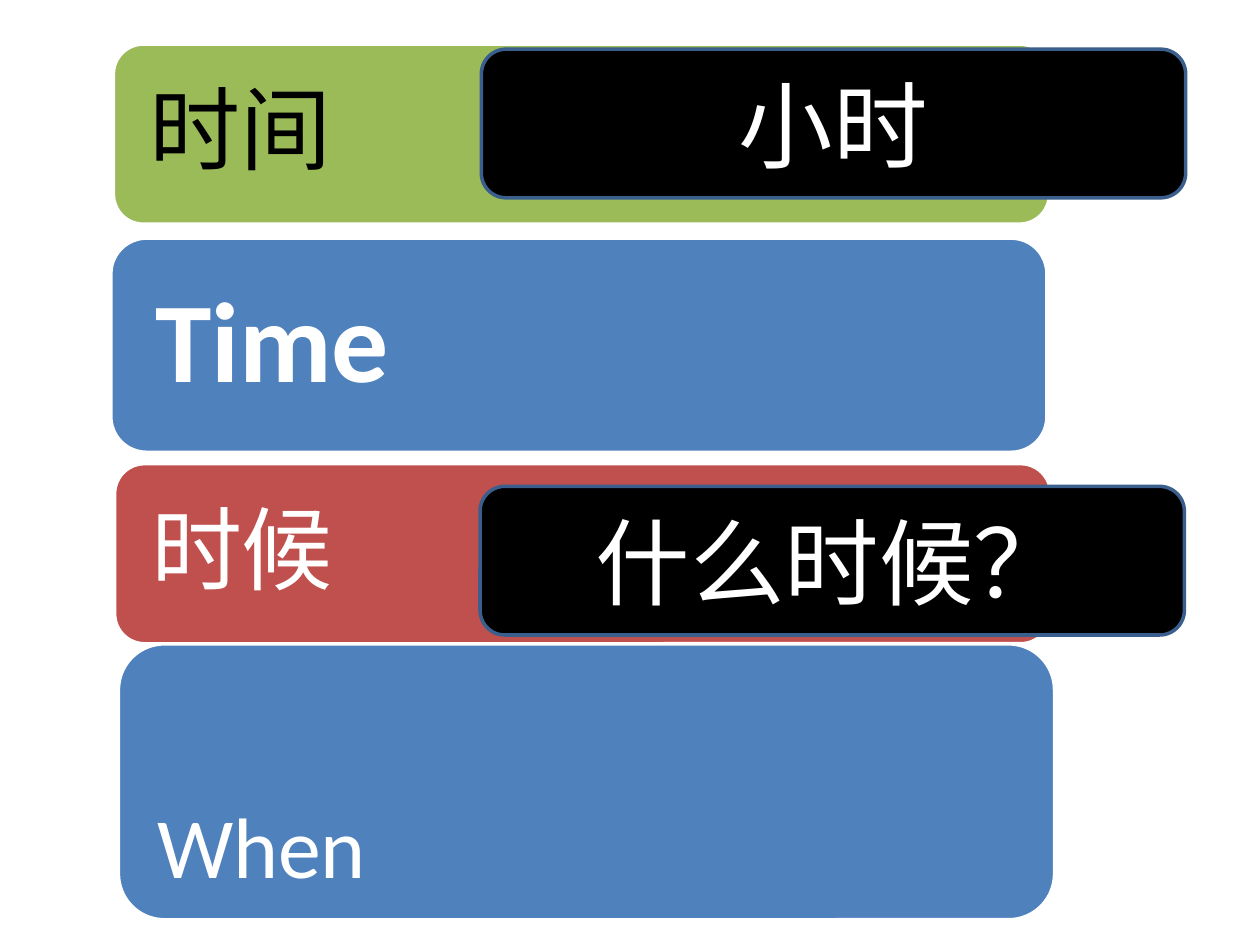
import pptx
import pptx.util
import pptx.oxml.ns
import pptx.dml.color
import pptx.enum.shapes
import pptx.enum.text
import lxml.etree

Inches = pptx.util.Inches
Pt = pptx.util.Pt
Align = pptx.enum.text.PP_ALIGN
Anchor = pptx.enum.text.MSO_ANCHOR

HUES = {
    "green": "9BBB59",
    "red": "C0504D",
    "blue": "4F81BD",
    "edge": "3A5F8C",
    "black": "000000",
    "white": "FFFFFF",
}


def tint(name):
    return pptx.dml.color.RGBColor.from_string(HUES[name])


class Deck:
    latin = "Calibri"
    asian = "Noto Sans CJK SC"
    line = 2

    def __init__(self, wide, high):
        self.show = pptx.Presentation()
        self.show.slide_width = Inches(wide)
        self.show.slide_height = Inches(high)
        self.slide = self.show.slides.add_slide(self.show.slide_layouts[6])

    def box(self, left, top, wide, high, fill, edge):
        kind = pptx.enum.shapes.MSO_SHAPE.ROUNDED_RECTANGLE
        shape = self.slide.shapes.add_shape(
            kind, Inches(left), Inches(top), Inches(wide), Inches(high))
        shape.shadow.inherit = False
        shape.fill.solid()
        shape.fill.fore_color.rgb = tint(fill)
        shape.line.color.rgb = tint(edge)
        shape.line.width = Pt(self.line)
        return shape

    def text(self, shape, words, size, hue, face, align, bold=False):
        frame = shape.text_frame
        frame.word_wrap = True
        frame.vertical_anchor = Anchor.MIDDLE
        para = frame.paragraphs[0]
        para.alignment = align
        run = para.add_run()
        run.text = words
        run.font.size = Pt(size)
        run.font.bold = bold
        run.font.name = face
        run.font.color.rgb = tint(hue)
        east = lxml.etree.SubElement(
            run.font._element, pptx.oxml.ns.qn("a:ea"))
        east.set("typeface", self.asian)
        return frame

    def band(self, left, top, high, fill, words, size, hue, inset, bold=False):
        shape = self.box(left, top, 7.43, high, fill, "white")
        frame = self.text(shape, words, size, hue, self.latin, Align.LEFT, bold)
        frame.margin_left = frame.margin_right = Inches(inset)
        frame.margin_top = frame.margin_bottom = Inches(inset)
        frame.paragraphs[0].line_spacing = 0.9
        return frame

    def card(self, left, top, words):
        shape = self.box(left, top, 5.59, 1.18, "black", "edge")
        self.text(shape, words, 54, "white", self.asian, Align.CENTER)


def main():
    deck = Deck(10, 7.5)
    deck.band(0.9, 0.35, 1.43, "green", "时间", 52, "black", 0.22)
    deck.band(0.88, 1.89, 1.7, "blue", "Time", 65, "white", 0.27, True)
    deck.band(0.91, 3.68, 1.43, "red", "时候", 52, "white", 0.22)
    when = deck.band(0.94, 5.11, 2.19, "blue", "When", 49, "white", 0.2)
    when.vertical_anchor = Anchor.BOTTOM
    when.margin_bottom = Inches(0.07)
    deck.card(3.81, 3.86, "什么时候？")
    deck.card(3.82, 0.39, "小时")
    deck.show.save("out.pptx")


if __name__ == "__main__":
    main()
